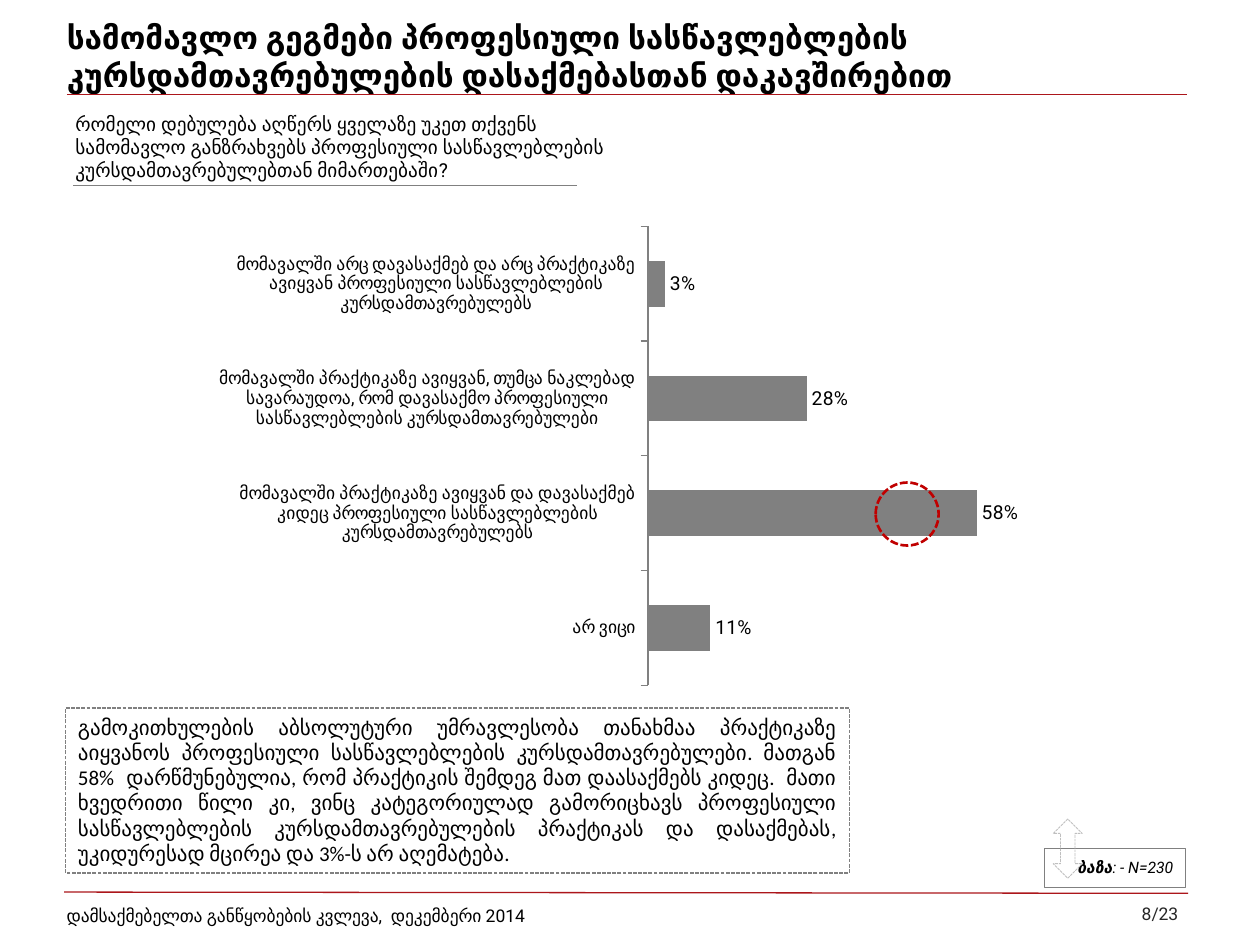
from dataclasses import dataclass

from lxml.etree import SubElement
from pptx import Presentation
from pptx.chart.data import CategoryChartData
from pptx.dml.color import RGBColor
from pptx.enum.chart import XL_CHART_TYPE, XL_LABEL_POSITION, XL_TICK_LABEL_POSITION, XL_TICK_MARK
from pptx.enum.dml import MSO_LINE
from pptx.enum.shapes import MSO_CONNECTOR, MSO_SHAPE
from pptx.enum.text import MSO_ANCHOR, PP_ALIGN
from pptx.oxml import parse_xml
from pptx.oxml.ns import nsdecls, qn
from pptx.util import Inches, Pt

CELL = Inches(0.1)
COLUMNS, ROWS = 100, 75
RED, GRAY, BLACK = "AC161B", "808080", "000000"


@dataclass
class Box:
    left: float
    top: float
    width: float
    height: float

    def inner(self, left, top, width, height):
        return Box(self.left + left, self.top + top, width, height)

    def emu(self):
        return [round(n * CELL) for n in (self.left, self.top, self.width, self.height)]


def color(value):
    return RGBColor.from_string(value)


def set_font(font, size, name="Roboto", tint=BLACK):
    font.size, font.name = Pt(size), name
    font.color.rgb = color(tint)


def set_line(line, tint, width, dash=None):
    line.color.rgb = color(tint)
    line.width = Pt(width)
    if dash:
        line.dash_style = dash


def add_rule(slide, box, tint):
    left, top, width, height = box.emu()
    rule = slide.shapes.add_connector(MSO_CONNECTOR.STRAIGHT, left, top, left + width, top + height)
    set_line(rule.line, tint, 0.75)
    SubElement(rule._element.spPr, qn("a:effectLst"))


def add_outline(slide, preset, box, tint, width, dash=None):
    outline = slide.shapes.add_shape(preset, *box.emu())
    outline.shadow.inherit = False
    outline.fill.background()
    set_line(outline.line, tint, width, dash)
    return outline


def write(shape, lines, size, name="Roboto", tint=BLACK, align=PP_ALIGN.LEFT, anchor=MSO_ANCHOR.MIDDLE):
    frame = shape.text_frame
    frame.word_wrap = True
    frame.vertical_anchor = anchor
    frame.text = "\n".join(lines)
    for paragraph in frame.paragraphs:
        paragraph.alignment = align
        set_font(paragraph.font, size, name, tint)
    return frame


def add_text(slide, box, lines, size, **style):
    return write(slide.shapes.add_textbox(*box.emu()), lines, size, **style)


def add_heading(slide, box):
    title = slide.shapes.title
    title.left, title.top, title.width, title.height = box.emu()
    frame = write(title, ["სამომავლო გეგმები პროფესიული სასწავლებლების "
                          "კურსდამთავრებულების დასაქმებასთან დაკავშირებით"], 18)
    frame.paragraphs[0].font.bold = True
    add_rule(slide, box.inner(1, 4.6, 88.9, 0), RED)


def add_question(slide, box):
    add_text(slide, box, [
        "რომელი დებულება აღწერს ყველაზე უკეთ თქვენს",
        "სამომავლო განზრახვებს პროფესიული სასწავლებლების კურსდამთავრებულებთან მიმართებაში?",
    ], 11, anchor=MSO_ANCHOR.TOP)
    add_rule(slide, box.inner(0.8, 6.3, 40, 0), GRAY)


def add_plans_chart(slide, box):
    plans = CategoryChartData(number_format="0%")
    plans.categories = [
        "მომავალში არც დავასაქმებ და არც პრაქტიკაზე ავიყვან პროფესიული სასწავლებლების კურსდამთავრებულებს",
        "მომავალში პრაქტიკაზე ავიყვან, თუმცა ნაკლებად სავარაუდოა, რომ დავასაქმო "
        "პროფესიული სასწავლებლების კურსდამთავრებულები",
        "მომავალში პრაქტიკაზე ავიყვან და დავასაქმებ კიდეც პროფესიული სასწავლებლების კურსდამთავრებულებს",
        "არ ვიცი",
    ]
    plans.add_series("Series 1", [0.03, 0.28, 0.58, 0.11])
    chart = slide.shapes.add_chart(XL_CHART_TYPE.BAR_CLUSTERED, *box.emu(), plans).chart
    chart.has_legend = chart.has_title = False
    set_font(chart.font, 18, "Calibri")

    answers = chart.category_axis
    answers.reverse_order = True
    answers.major_tick_mark = XL_TICK_MARK.OUTSIDE
    answers.tick_label_position = XL_TICK_LABEL_POSITION.LOW
    answers.has_major_gridlines = False
    set_font(answers.tick_labels.font, 10)
    set_line(answers.format.line, GRAY, 0.75)

    shares = chart.value_axis
    shares.visible = shares.has_major_gridlines = False
    shares.minimum_scale, shares.maximum_scale = 0, 0.7

    plot = chart.plots[0]
    plot.gap_width = 150
    plot.vary_by_categories = False
    bars = plot.series[0]
    bars.format.fill.solid()
    bars.format.fill.fore_color.rgb = color(GRAY)
    labels = bars.data_labels
    labels.show_value = True
    labels.number_format, labels.number_format_is_linked = "0%", False
    labels.position = XL_LABEL_POSITION.OUTSIDE_END
    set_font(labels.font, 11)

    area = chart._chartSpace.chart.plotArea
    for old in area.findall(qn("c:layout")):
        area.remove(old)
    modes = "".join(f'<c:{axis}Mode val="edge"/>' for axis in "xy")
    sizes = "".join(f'<c:{key} val="{share}"/>' for key, share in zip("xywh", (0.52, 0.07, 0.47, 0.92)))
    area.insert(0, parse_xml(
        f'<c:layout {nsdecls("c")}><c:manualLayout><c:layoutTarget val="inner"/>'
        f'{modes}{sizes}</c:manualLayout></c:layout>'))

    add_outline(slide, MSO_SHAPE.OVAL, box.inner(52.9, 23.1, 5, 5), "C00000", 1.5, MSO_LINE.SQUARE_DOT)


def add_base(slide, box):
    base = add_outline(slide, MSO_SHAPE.RECTANGLE, box, GRAY, 0.5)
    paragraph = write(base, ["ბაზა"], 9, align=PP_ALIGN.RIGHT).paragraphs[0]
    paragraph.font.italic = True
    paragraph.runs[0].font.bold = True
    paragraph.add_run().text = ": - N=230"
    add_outline(slide, MSO_SHAPE.UP_DOWN_ARROW, box.inner(0.7, -2.3, 2.3, 4.7),
                "BFBFBF", 0.5, MSO_LINE.SQUARE_DOT)


def add_summary(slide, box):
    summary = add_outline(slide, MSO_SHAPE.RECTANGLE, box, GRAY, 0.75, MSO_LINE.SQUARE_DOT)
    write(summary, [
        "გამოკითხულების აბსოლუტური უმრავლესობა თანახმაა პრაქტიკაზე აიყვანოს პროფესიული "
        "სასწავლებლების კურსდამთავრებულები. მათგან 58%  დარწმუნებულია, რომ პრაქტიკის შემდეგ "
        "მათ დაასაქმებს კიდეც.  მათი ხვედრითი წილი კი, ვინც კატეგორიულად გამორიცხავს "
        "პროფესიული სასწავლებლების კურსდამთავრებულების პრაქტიკას და დასაქმებას, "
        "უკიდურესად მცირეა და 3%-ს არ აღემატება."
    ], 12, name="Calibri", align=PP_ALIGN.JUSTIFY, anchor=MSO_ANCHOR.TOP)


def add_footer(slide, box):
    add_rule(slide, box.inner(0.8, 0.1, 89.2, 0.1), RED)
    add_text(slide, box.inner(0, 0, 58.5, 4), ["დამსაქმებელთა განწყობების კვლევა,  დეკემბერი 2014"], 10)
    add_text(slide, box.inner(box.width - 15.3, -0.3, 15.3, 4.2), ["8/23"], 10,
             tint="262626", align=PP_ALIGN.RIGHT)


def main():
    deck = Presentation()
    deck.slide_width, deck.slide_height = COLUMNS * CELL, ROWS * CELL
    slide = deck.slides.add_slide(deck.slide_layouts[5])
    add_footer(slide, Box(4.3, 70.7, 90.2, 4))
    add_plans_chart(slide, Box(16.6, 15.2, 67, 39.6))
    add_question(slide, Box(5, 8.4, 46.6, 6.6))
    add_heading(slide, Box(4.3, 2.9, 79.2, 3.1))
    add_base(slide, Box(82.9, 67.3, 11.2, 3.1))
    add_summary(slide, Box(5.2, 56.2, 62.2, 13.1))
    deck.save("out.pptx")


if __name__ == "__main__":
    main()
